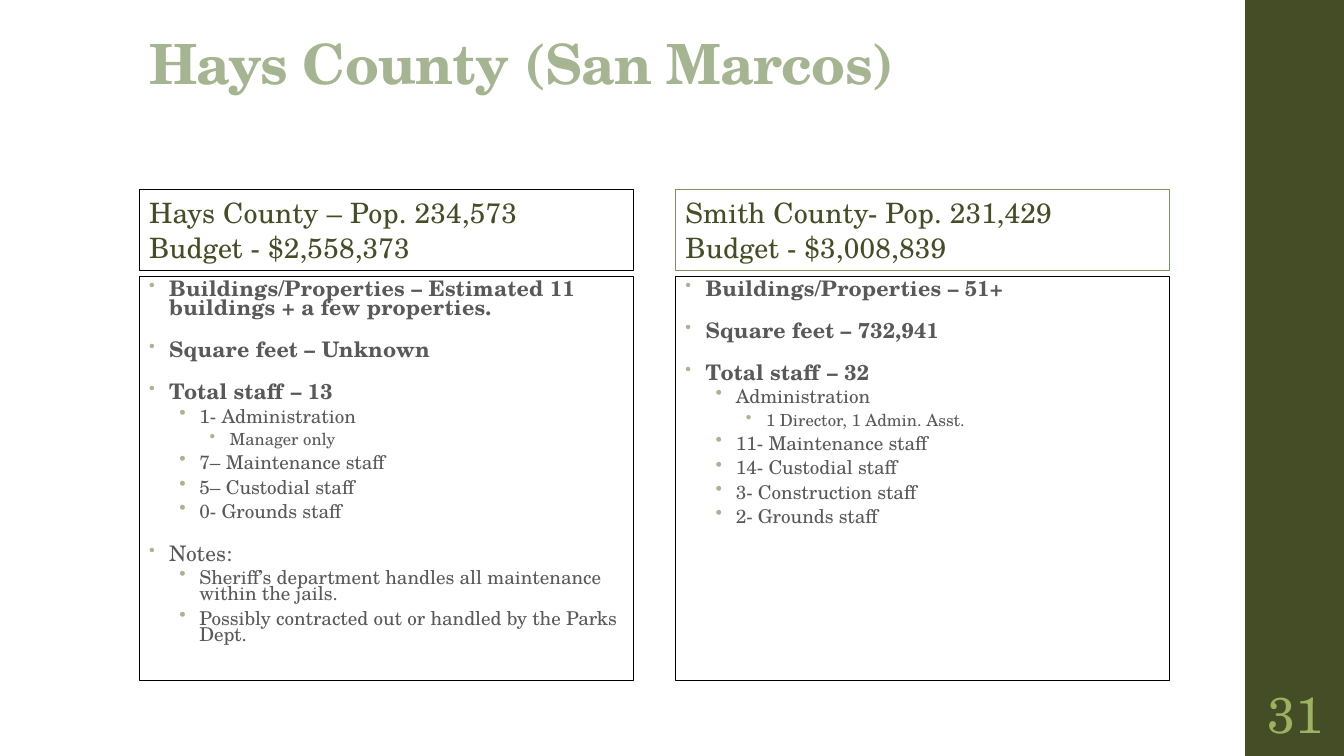
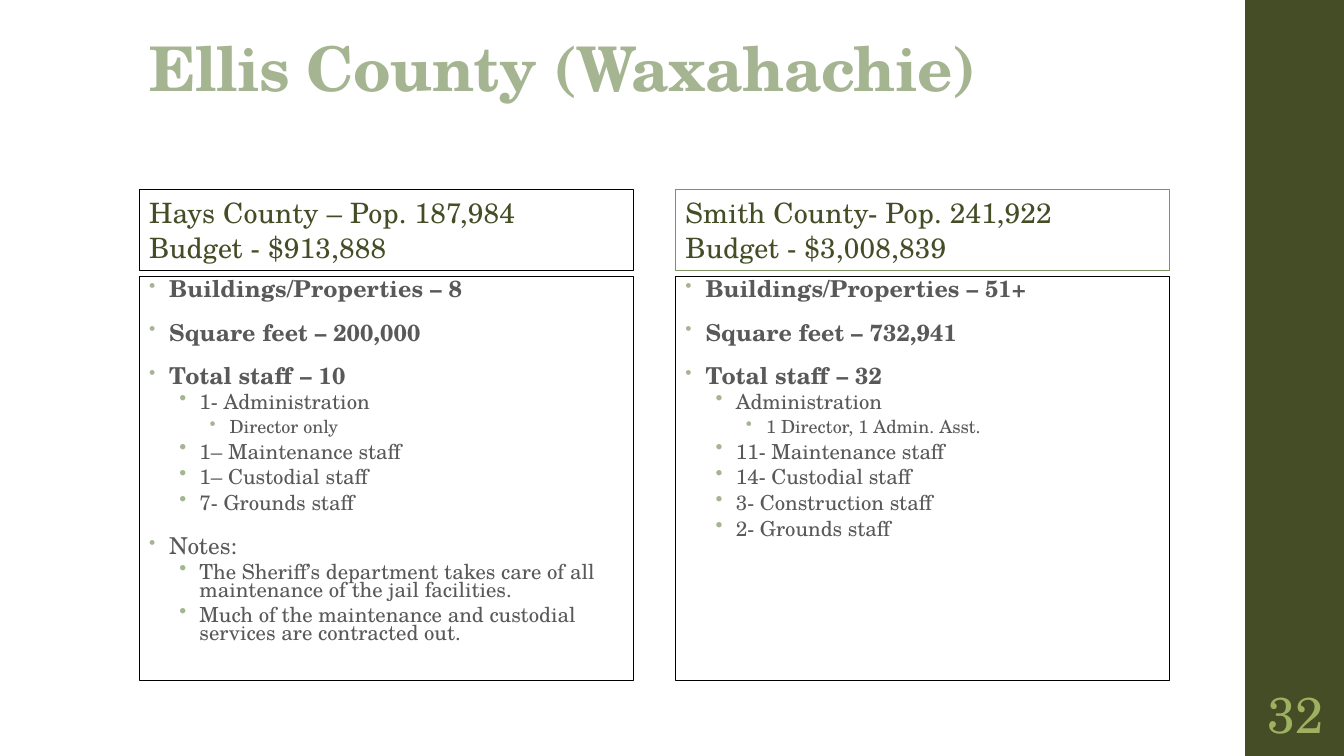
"""Build two slides that compare county facility staff with Smith County."""
from lxml.etree import SubElement
from pptx import Presentation
from pptx.dml.color import RGBColor
from pptx.enum.shapes import MSO_SHAPE
from pptx.enum.text import MSO_ANCHOR, PP_ALIGN
from pptx.oxml.ns import qn
from pptx.util import Inches, Pt

FONT = "TeX Gyre Schola"
DARK = RGBColor(0x44, 0x4D, 0x26)
SAGE = RGBColor(0xA5, 0xB5, 0x92)
MOSS = RGBColor(0x7D, 0x92, 0x63)
LIME = RGBColor(0x9E, 0xB1, 0x60)
GRAY = RGBColor(0x59, 0x59, 0x59)
BLACK = RGBColor(0, 0, 0)

SMITH = [
    (0, "Buildings/Properties – 51+"),
    (0, "Square feet – 732,941"),
    (0, "Total staff – 32"),
    (1, "Administration"),
    (2, "1 Director, 1 Admin. Asst."),
    (1, "11- Maintenance staff"),
    (1, "14- Custodial staff"),
    (1, "3- Construction staff"),
    (1, "2- Grounds staff"),
]
HAYS = [
    (0, "Buildings/Properties – Estimated 11 buildings + a few properties."),
    (0, "Square feet – Unknown"),
    (0, "Total staff – 13"),
    (1, "1- Administration"),
    (2, "Manager only"),
    (1, "7– Maintenance staff"),
    (1, "5– Custodial staff"),
    (1, "0- Grounds staff"),
    (0, "Notes:"),
    (1, "Sheriff’s department handles all maintenance within the jails."),
    (1, "Possibly contracted out or handled by the Parks Dept."),
]
ELLIS = [
    (0, "Buildings/Properties – 8"),
    (0, "Square feet – 200,000"),
    (0, "Total staff – 10"),
    (1, "1- Administration"),
    (2, "Director only"),
    (1, "1– Maintenance staff"),
    (1, "1– Custodial staff"),
    (1, "7- Grounds staff"),
    (0, "Notes:"),
    (1, "The Sheriff’s department takes care of all maintenance of the jail facilities."),
    (1, "Much of the maintenance and custodial services are contracted out."),
]
PAGES = [
    ("31", "Hays County (San Marcos)", 39.6, 0.72, (15.3, 13.6, 11.9), [
        (["Hays County – Pop. 234,573", "Budget - $2,558,373"], HAYS),
        (["Smith County- Pop. 231,429", "Budget - $3,008,839"], SMITH),
    ]),
    ("32", "Ellis County (Waxahachie)", 44, 0.8, (16.6, 14.8, 12.9), [
        (["Hays County – Pop. 187,984", "Budget - $913,888"], ELLIS),
        (["Smith County- Pop. 241,922", "Budget - $3,008,839"], SMITH),
    ]),
]
COLS = [(1.38, BLACK), (6.7, MOSS)]


def add_box(slide, left, top, width, height, anchor, line=None):
    box = slide.shapes.add_textbox(Inches(left), Inches(top), Inches(width), Inches(height))
    if line is not None:
        box.line.color.rgb = line
        box.line.width = Pt(0.75)
    frame = box.text_frame
    frame.word_wrap = True
    frame.vertical_anchor = anchor
    return frame


def add_text(frame, text, size, color, bold=False, track=0, level=None):
    first = frame.paragraphs[0]
    para = first if not first.runs else frame.add_paragraph()
    para.text = text
    if level is not None:
        para.level = level
        props = para._p.get_or_add_pPr()
        props.set("marL", str(Inches(0.2 + 0.3 * level)))
        props.set("indent", str(Inches(-0.2)))
        tint = SubElement(props, qn("a:buClr"))
        SubElement(tint, qn("a:srgbClr"), val=str(SAGE))
        if level == 0:
            SubElement(props, qn("a:buSzPct"), val="80000")
        SubElement(props, qn("a:buChar"), char="•")
    font = para.font
    font.name = FONT
    font.size = Pt(size)
    font.bold = bold
    font.color.rgb = color
    if track:
        font._rPr.set("spc", str(track))
    return para


deck = Presentation()
deck.slide_width = Inches(13.33)
deck.slide_height = Inches(7.5)

for number, title, size, height, sizes, columns in PAGES:
    slide = deck.slides.add_slide(deck.slide_layouts[6])
    band = slide.shapes.add_shape(
        MSO_SHAPE.RECTANGLE, Inches(12.35), 0, Inches(1), deck.slide_height)
    band.shadow.inherit = False
    band.fill.solid()
    band.fill.fore_color.rgb = DARK
    band.line.fill.background()

    frame = add_box(slide, 1.38, 0.29, 10.6, height, MSO_ANCHOR.BOTTOM)
    frame.margin_top = Inches(0.03)
    add_text(frame, title, size, SAGE, True, -50).line_spacing = 0.9

    for (left, edge), (heads, items) in zip(COLS, columns):
        frame = add_box(slide, left, 1.88, 4.9, 0.8, MSO_ANCHOR.BOTTOM, edge)
        for head in heads:
            para = add_text(frame, head, 20, DARK, track=10)
            para.line_spacing = 0.95
            para.space_after = Pt(2)

        frame = add_box(slide, left, 2.74, 4.9, 4.01, MSO_ANCHOR.TOP, BLACK)
        for index, (level, text) in enumerate(items):
            top = level == 0
            bold = top and text != "Notes:"
            para = add_text(frame, text, sizes[level], GRAY, bold, 10 if top else 0, level)
            para.line_spacing = 0.75 if top else 0.7
            para.space_after = Pt(2 if top else 3)
            if index:
                para.space_before = Pt(14 if top else 3)

    frame = add_box(slide, 12.35, 6.75, 1, 0.65, MSO_ANCHOR.MIDDLE)
    frame.margin_left = frame.margin_right = Inches(0.05)
    add_text(frame, number, 36, LIME).alignment = PP_ALIGN.CENTER

deck.save("out.pptx")
